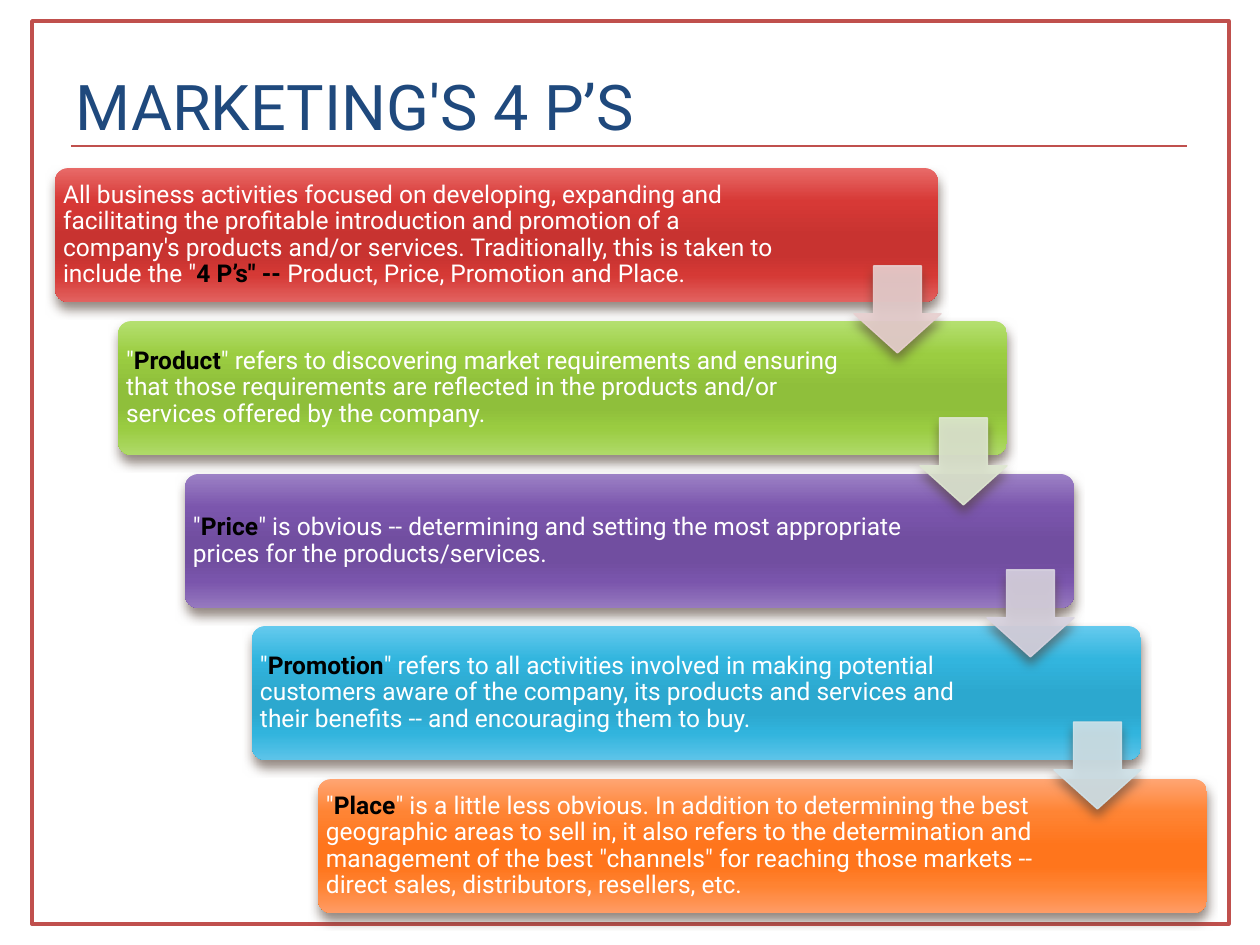
import pptx
import pptx.util
from lxml import etree
from pptx.dml.color import RGBColor
from pptx.enum.shapes import MSO_CONNECTOR, MSO_SHAPE
from pptx.enum.text import MSO_ANCHOR, MSO_AUTO_SIZE, PP_ALIGN
from pptx.oxml.ns import qn

SCALE = 914400 / 126
FONT = "Roboto"
WHITE = RGBColor(0xFF, 0xFF, 0xFF)
BLACK = RGBColor(0, 0, 0)
NAVY = RGBColor(0x1F, 0x49, 0x7D)
RED = RGBColor(0xC0, 0x50, 0x4D)
SHADE = RGBColor(0x4E, 0x3B, 0x30)

# Box layout, in px
TOP, LEFT, DOWN, ACROSS = 168, 52, 152.75, 66.5
WIDE, HIGH, TEXT_W, PAD = 889, 134, 736, 8
ARROW_X, ARROW_Y, ARROW_DOWN, ARROW = 854, 266, 152, 87

# Gradient positions in percent, shared by all boxes
STOPS = (0, 25, 50, 65, 80, 100)

# Text before, bold term, text after, gradient colours
STEPS = [
    ("All business activities focused on developing, expanding and facilitating "
     "the profitable introduction and promotion of a company's products and/or "
     "services. Traditionally, this is taken to include the \"",
     "4 P’s\" -- ", "Product, Price, Promotion and Place.",
     "E86A68 D73936 C83330 C83330 D53935 E26260"),
    ("\"", "Product",
     "\" refers to discovering market requirements and ensuring that those "
     "requirements are reflected in the products and/or services offered by "
     "the company.",
     "B5E071 9BCD41 8FBF3B 8FBF3B 9ACC41 AFDA69"),
    ("\"", "Price",
     "\" is obvious -- determining and setting the most appropriate prices for "
     "the products/services.",
     "9C81C5 7B56AD 714EA0 714EA0 7A55AC 9679BF"),
    ("\"", "Promotion",
     "\" refers to all activities involved in making potential customers aware "
     "of the company, its products and services and their benefits -- and "
     "encouraging them to buy.",
     "65CAEE 32B5DE 2CA8CF 2CA8CF 31B4DD 5DC4E9"),
    ("\"", "Place",
     "\" is a little less obvious. In addition to determining the best "
     "geographic areas to sell in, it also refers to the determination and "
     "management of the best \"channels\" for reaching those markets -- direct "
     "sales, distributors, resellers, etc.",
     "FFA573 FF8434 FF751C FF751C FF8332 FF9C66"),
]
ARROWS = [RGBColor(0xE8, 0xD0, 0xD0), RGBColor(0xDE, 0xE7, 0xD1),
          RGBColor(0xD8, 0xD3, 0xE0), RGBColor(0xD0, 0xE3, 0xEA)]


def px(*vals):
    return [pptx.util.Emu(round(v * SCALE)) for v in vals]


def add_node(parent, tag, **attrs):
    return etree.SubElement(parent, qn(tag), {k: str(v) for k, v in attrs.items()})


def add_shade(shape):
    shape.shadow.inherit = False
    effects = shape._element.spPr.find(qn("a:effectLst"))
    outer = add_node(effects, "a:outerShdw", blurRad=76200, dist=50800,
                     dir=5400000, algn="ctr", rotWithShape=0)
    tone = add_node(outer, "a:srgbClr", val=SHADE)
    add_node(tone, "a:alpha", val=60000)


def style_run(run, size, color, bold=False):
    run.font.name = FONT
    run.font.size = pptx.util.Pt(size)
    run.font.color.rgb = color
    run.font.bold = bold


def add_title(slide):
    title = slide.shapes.title
    title.left, title.top, title.width, title.height = px(63, 63, 1197, 84)
    frame = title.text_frame
    frame.text = "MARKETING'S 4 P’S"
    frame.auto_size = MSO_AUTO_SIZE.NONE
    frame.vertical_anchor = MSO_ANCHOR.MIDDLE
    para = frame.paragraphs[0]
    para.alignment = PP_ALIGN.LEFT
    style_run(para.runs[0], 36, NAVY)


def add_frame(slide):
    frame = slide.shapes.add_shape(MSO_SHAPE.RECTANGLE, *px(32, 21, 1197, 903))
    frame.shadow.inherit = False
    frame.fill.background()
    frame.line.color.rgb = RED
    frame.line.width = pptx.util.Pt(2)


def add_rule(slide):
    rule = slide.shapes.add_connector(MSO_CONNECTOR.STRAIGHT,
                                      *px(71, 146, 1187, 146))
    rule.line.color.rgb = RED
    rule.line.width = pptx.util.Pt(1.5)
    add_node(rule._element.spPr, "a:effectLst")


def add_box(slide, left, top, width, colors):
    box = slide.shapes.add_shape(MSO_SHAPE.ROUNDED_RECTANGLE,
                                 *px(left, top, width, HIGH))
    box.adjustments[0] = 0.1
    box.fill.gradient()
    box.fill.gradient_angle = 270
    stops = next(box._element.spPr.iter(qn("a:gsLst")))
    for old in list(stops):
        stops.remove(old)
    for pos, color in zip(STOPS, colors.split()):
        add_node(add_node(stops, "a:gs", pos=pos * 1000), "a:srgbClr", val=color)
    box.line.fill.background()
    add_shade(box)


def add_text(slide, left, top, parts):
    box = slide.shapes.add_textbox(*px(left, top, TEXT_W, HIGH))
    frame = box.text_frame
    frame.word_wrap = True
    frame.vertical_anchor = MSO_ANCHOR.MIDDLE
    (frame.margin_left, frame.margin_top,
     frame.margin_right, frame.margin_bottom) = px(PAD, PAD, PAD, PAD)
    para = frame.paragraphs[0]
    para.line_spacing = 0.9
    para.space_after = pptx.util.Pt(5)
    for part, color in zip(parts, (WHITE, BLACK, WHITE)):
        run = para.add_run()
        run.text = part
        style_run(run, 14, color, color == BLACK)


def add_arrow(slide, left, top, color):
    arrow = slide.shapes.add_shape(MSO_SHAPE.DOWN_ARROW,
                                   *px(left, top, ARROW, ARROW))
    arrow.adjustments[0] = 0.55
    arrow.adjustments[1] = 0.45
    arrow.fill.solid()
    arrow.fill.fore_color.rgb = color
    arrow.line.color.rgb = color
    arrow.line.width = pptx.util.Pt(0.79)
    for tone in list(arrow._element.spPr.iter(qn("a:srgbClr"))):
        add_node(tone, "a:alpha", val=90000)
    add_shade(arrow)


def main():
    deck = pptx.Presentation()
    deck.slide_width, deck.slide_height = px(1260, 945)
    slide = deck.slides.add_slide(deck.slide_layouts[5])

    # Border, rule and heading
    add_rule(slide)
    add_frame(slide)
    add_title(slide)

    # Staircase of boxes; the first is slightly narrower
    for i, (*parts, colors) in enumerate(STEPS):
        trim = 3 if i == 0 else 0
        left, top = round(LEFT + ACROSS * i) + trim, round(TOP + DOWN * i)
        add_box(slide, left, top, WIDE - 2 * trim, colors)
        add_text(slide, left, top, parts)

    # Arrows from each box to the next
    for i, color in enumerate(ARROWS):
        add_arrow(slide, round(ARROW_X + ACROSS * i), ARROW_Y + ARROW_DOWN * i, color)

    deck.save("out.pptx")


if __name__ == "__main__":
    main()
